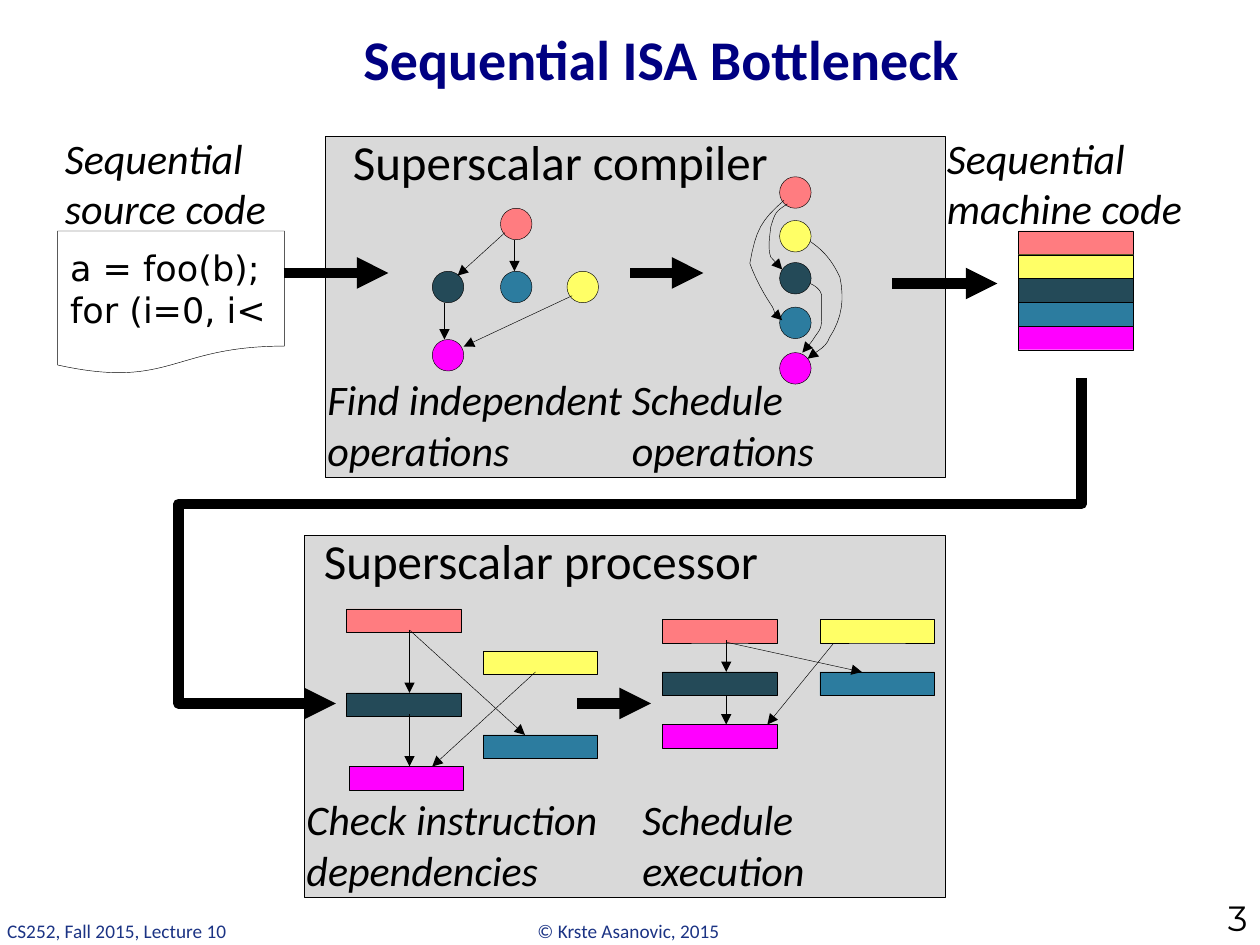
"""Build the slide on the sequential ISA bottleneck."""
from dataclasses import dataclass

import lxml.etree
import pptx
import pptx.dml.color
import pptx.enum.shapes
import pptx.enum.text
import pptx.oxml.ns
import pptx.util

Pt = pptx.util.Pt
Shape = pptx.enum.shapes.MSO_SHAPE
Align = pptx.enum.text.PP_ALIGN
Anchor = pptx.enum.text.MSO_ANCHOR
Point = tuple[float, float]

BLACK, WHITE, GREY = "000000", "FFFFFF", "D9D9D9"
RED, YELLOW, DARK, BLUE, PINK = "FF7C80", "FFFF66", "244A58", "2C7C9F", "FF00FF"
OPERATIONS = (RED, YELLOW, DARK, BLUE, PINK)
THIN, THICK = 0.25, 6

CAPTION = {"size": Pt(24), "name": "Calibri", "italic": True}
HEADING = {"size": Pt(28), "name": "Calibri"}
FOOTER = {"size": Pt(11), "name": "Calibri"}
NUMBER = {"size": Pt(20), "name": "Montserrat"}
CODE = {"size": Pt(20), "name": "DejaVu Sans"}
TITLE = {"size": Pt(32), "name": "Calibri", "bold": True}


@dataclass
class Box:
    left: float
    top: float
    width: float
    height: float

    def lengths(self) -> tuple:
        return tuple(Pt(v) for v in (self.left, self.top, self.width, self.height))


@dataclass
class Label:
    text: str
    box: Box
    font: dict
    colour: str = BLACK
    wrap: bool = True
    align: Align = Align.LEFT
    anchor: Anchor = Anchor.TOP


@dataclass
class Arrow:
    start: Point
    end: Point
    width: float = THIN


@dataclass
class Curve:
    start: Point
    segments: list[tuple[Point, ...]]


def paint(target, colour: str) -> None:
    target.rgb = pptx.dml.color.RGBColor.from_string(colour)


def write(frame, label: Label) -> None:
    frame.word_wrap = label.wrap
    frame.vertical_anchor = label.anchor
    for index, line in enumerate(label.text.split("\n")):
        para = frame.paragraphs[0] if index == 0 else frame.add_paragraph()
        para.alignment = label.align
        span = para.add_run()
        span.text = line
        for name, value in label.font.items():
            setattr(span.font, name, value)
        paint(span.font.color, label.colour)


def draw_label(page, label: Label) -> None:
    write(page.shapes.add_textbox(*label.box.lengths()).text_frame, label)


def outline(shape, width: float) -> None:
    shape.line.width = Pt(width)
    shape.line.fill.solid()
    paint(shape.line.color, BLACK)


def draw_shape(page, kind: Shape, box: Box, colour: str):
    shape = page.shapes.add_shape(kind, *box.lengths())
    shape.shadow.inherit = False
    shape.fill.solid()
    paint(shape.fill.fore_color, colour)
    outline(shape, THIN)
    return shape


def add_head(shape) -> None:
    line = shape.element.spPr.find(pptx.oxml.ns.qn("a:ln"))
    lxml.etree.SubElement(line, pptx.oxml.ns.qn("a:tailEnd"), type="triangle")


def draw_arrow(page, arrow: Arrow) -> None:
    ends = (Pt(v) for v in arrow.start + arrow.end)
    line = page.shapes.add_connector(pptx.enum.shapes.MSO_CONNECTOR.STRAIGHT, *ends)
    outline(line, arrow.width)
    add_head(line)
    lxml.etree.SubElement(line.element.spPr, pptx.oxml.ns.qn("a:effectLst"))


def draw_route(page, points: list[Point], width: float) -> None:
    corners = [(Pt(x), Pt(y)) for x, y in points]
    builder = page.shapes.build_freeform(*corners[0], scale=1.0)
    builder.add_line_segments(corners[1:], close=False)
    route = builder.convert_to_shape()
    route.shadow.inherit = False
    route.fill.background()
    outline(route, width)
    add_head(route)


def bezier(points: tuple[Point, ...], t: float) -> Point:
    while len(points) > 1:
        points = tuple((a[0] + (b[0] - a[0]) * t, a[1] + (b[1] - a[1]) * t)
                       for a, b in zip(points, points[1:]))
    return points[0]


def draw_curve(page, curve: Curve, steps: int = 8) -> None:
    points = [curve.start]
    for segment in curve.segments:
        controls = (points[-1], *segment)
        count = steps if len(segment) > 1 else 1
        points += [bezier(controls, step / count) for step in range(1, count + 1)]
    draw_route(page, points, THIN)


PANELS = [Box(174, 306, 366, 206.5), Box(186, 78, 354, 195)]
CHECKED = [(198, 348), (276, 372), (198, 396), (276, 420), (199.5, 438)]
EXECUTED = [(378.5, 354), (468.5, 354), (378.5, 384), (468.5, 384), (378.5, 414)]
MACHINE_CODE = [(582, 132 + 13.6 * row) for row in range(len(OPERATIONS))]
FOUND = [(286, 119), (324, 155), (247, 155), (286, 155), (247, 194)]
SCHEDULED = [(445.5, top) for top in (101, 126, 150, 175.5, 201.5)]
ROUTE = [(618, 216), (618, 288), (102, 288), (102, 402), (192, 402)]

ARROWS = [
    Arrow((234, 360), (234, 396)), Arrow((234, 408), (234, 438)),
    Arrow((306, 384), (247, 438)), Arrow((234, 360), (300, 420)),
    Arrow((288.5, 133), (261.5, 157.5)), Arrow((294, 137), (294, 155)),
    Arrow((254, 173), (254, 194)), Arrow((327, 169), (265, 198)),
    Arrow((415, 366), (415, 384)), Arrow((415, 367), (492.5, 384)),
    Arrow((476, 368), (438.5, 414)), Arrow((415, 397.5), (415, 414)),
    Arrow((162, 156), (222, 156), THICK), Arrow((360, 156), (402, 156), THICK),
    Arrow((510, 162), (570, 162), THICK), Arrow((330, 402), (372, 402), THICK),
]
CURVES = [
    Curve((463, 138), [((472, 144), (476.5, 151), (480, 158.5)),
                       ((482.5, 170.5), (481.5, 181.5), (474, 193)),
                       ((472, 199.5), (463.5, 202), (465, 203)), ((461.5, 205),)]),
    Curve((450, 116.5), [((443, 121), (443, 121.5), (440.5, 129.5)),
                         ((440, 134), (438.5, 142), (440.5, 147)),
                         ((442, 148.5), (447, 154), (447, 154))]),
    Curve((448, 114.5), [((435, 126), (432, 131), (428.5, 150.5)),
                         ((432, 160), (436.5, 168), (441.5, 175.5)),
                         ((443.5, 180), (441.5, 178), (445, 181.5)), ((447, 183),)]),
    Curve((463, 162), [((466, 163.5), (468.5, 165), (469.5, 168.5)), ((469.5, 183),),
                       ((469.5, 188.5), (467.5, 189.5), (465, 193.5)),
                       ((463.5, 196), (461.5, 198), (460, 199.5)), ((458.5, 201.5),)]),
]
LABELS = [
    Label("© Krste Asanovic, 2015", Box(300, 522, 120, 21), FOOTER, "1B3384", False),
    Label("CS252, Fall 2015, Lecture 10", Box(-3, 522, 141, 21), FOOTER, "1B3384", False),
    Label("3", Box(654, 521, 66, 19), NUMBER, align=Align.RIGHT, anchor=Anchor.BOTTOM),
    Label("Superscalar processor", Box(178, 299.5, 266, 41), HEADING, wrap=False),
    Label("Superscalar compiler", Box(194.5, 71.5, 256, 41), HEADING, wrap=False),
    Label("Check instruction dependencies", Box(168, 450, 204, 65.5), CAPTION),
    Label("Schedule execution", Box(360, 450, 186, 65.5), CAPTION),
    Label("Find independent operations", Box(180, 210, 192, 65.5), CAPTION),
    Label("Schedule operations", Box(354, 210, 192, 65.5), CAPTION),
    Label("Sequential source code", Box(30, 72, 137, 65.5), CAPTION),
    Label("Sequential machine code", Box(534, 72, 162, 65.5), CAPTION),
]
HEADLINE = Label("Sequential ISA Bottleneck", Box(96, 6, 564, 54), TITLE, "000081",
                 align=Align.CENTER, anchor=Anchor.MIDDLE)
SOURCE = Label("a = foo(b);\nfor (i=0, i<", Box(33, 132, 129.5, 82), CODE,
               wrap=False, anchor=Anchor.MIDDLE)


def main() -> None:
    deck = pptx.Presentation()
    deck.slide_width, deck.slide_height = Pt(720), Pt(540)
    page = deck.slides.add_slide(deck.slide_layouts[5])
    title = page.shapes.title
    title.left, title.top, title.width, title.height = HEADLINE.box.lengths()
    write(title.text_frame, HEADLINE)
    for panel in PANELS:
        draw_shape(page, Shape.RECTANGLE, panel, GREY)
    document = draw_shape(page, Shape.FLOWCHART_DOCUMENT, SOURCE.box, WHITE)
    write(document.text_frame, SOURCE)
    for kind, width, height, groups in (
            (Shape.RECTANGLE, 65.5, 13.5, (CHECKED, EXECUTED, MACHINE_CODE)),
            (Shape.OVAL, 18, 18, (FOUND, SCHEDULED))):
        for group in groups:
            for corner, colour in zip(group, OPERATIONS):
                draw_shape(page, kind, Box(*corner, width, height), colour)
    draw_route(page, ROUTE, THICK)
    for arrow in ARROWS:
        draw_arrow(page, arrow)
    for curve in CURVES:
        draw_curve(page, curve)
    for label in LABELS:
        draw_label(page, label)
    deck.save("out.pptx")


if __name__ == "__main__":
    main()
